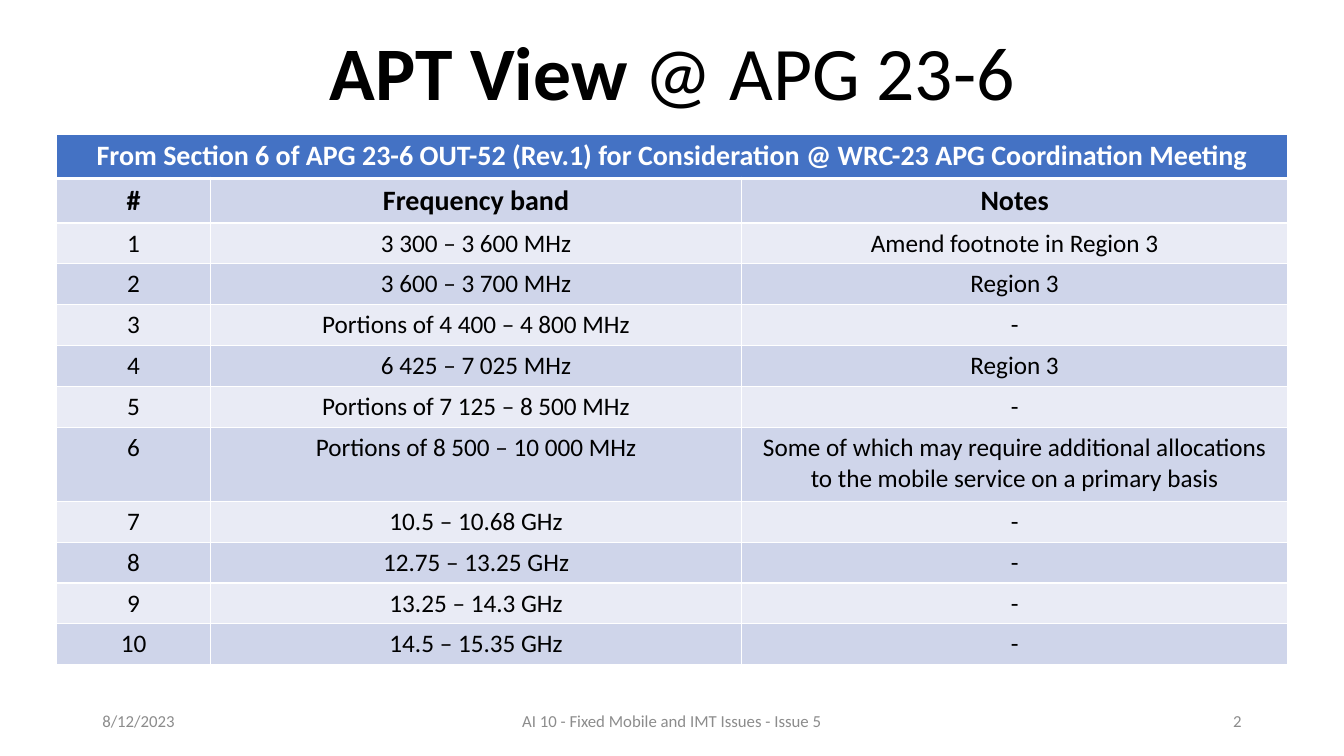
from lxml import etree
from pptx import Presentation
from pptx import util as u
from pptx.dml.color import RGBColor
from pptx.enum import text
from pptx.oxml import ns

COLORS = {
    "header": "4472C4",
    "dark_band": "CFD5EA",
    "light_band": "E9EBF5",
    "white": "FFFFFF",
    "black": "000000",
    "footer": "8C8C8C",
}
CENTER = text.PP_ALIGN.CENTER


def format_runs(paragraph, size, color, bold=False, align=CENTER):
    paragraph.alignment = align
    for run in paragraph.runs:
        run.font.name = "Calibri"
        run.font.size = u.Pt(size)
        run.font.bold = bold
        run.font.color.rgb = RGBColor.from_string(COLORS[color])


def add_borders(cell, bottom_width):
    properties = cell._tc.get_or_add_tcPr()
    widths = {"lnL": 1, "lnR": 1, "lnT": 1, "lnB": bottom_width}
    for position, (side, width) in enumerate(widths.items()):
        line = etree.Element(ns.qn(f"a:{side}"), w=str(u.Pt(width)))
        fill = etree.SubElement(line, ns.qn("a:solidFill"))
        etree.SubElement(fill, ns.qn("a:srgbClr"), val=COLORS["white"])
        properties.insert(position, line)


presentation = Presentation()
presentation.slide_width = u.Pt(960)
presentation.slide_height = u.Pt(540)
slide = presentation.slides.add_slide(presentation.slide_layouts[5])

# Title
title = slide.shapes.title
title.left, title.top = u.Pt(221.8), u.Pt(14.4)
title.width, title.height = u.Pt(517), u.Pt(73)
title.text_frame.text = "APT View "
title.text_frame.auto_size = text.MSO_AUTO_SIZE.NONE
title.text_frame.vertical_anchor = text.MSO_ANCHOR.TOP
paragraph = title.text_frame.paragraphs[0]
paragraph.add_run().text = "@ APG 23-6"
format_runs(paragraph, 54, "black", bold=True)
paragraph.runs[1].font.bold = False

# Frequency band table
bands = [
    ("3 300 – 3 600 MHz", "Amend footnote in Region 3"),
    ("3 600 – 3 700 MHz", "Region 3"),
    ("Portions of 4 400 – 4 800 MHz", "-"),
    ("6 425 – 7 025 MHz", "Region 3"),
    ("Portions of 7 125 – 8 500 MHz", "-"),
    ("Portions of 8 500 – 10 000 MHz",
     "Some of which may require additional allocations to the mobile service on a primary basis"),
    ("10.5 – 10.68 GHz", "-"),
    ("12.75 – 13.25 GHz", "-"),
    ("13.25 – 14.3 GHz", "-"),
    ("14.5 – 15.35 GHz", "-"),
]
heading = "From Section 6 of APG 23-6 OUT-52 (Rev.1) for Consideration @ WRC-23 APG Coordination Meeting"
rows = [(heading, "", ""), ("#", "Frequency band", "Notes")]
rows += [(str(number), *band) for number, band in enumerate(bands, 1)]

table = slide.shapes.add_table(
    len(rows), 3, u.Pt(40.4), u.Pt(95.8), u.Pt(879.4), u.Pt(378)).table
for column, width in zip(table.columns, (110, 379.4, 390)):
    column.width = u.Pt(width)
for row_index, values in enumerate(rows):
    is_tall = row_index == 7
    table.rows[row_index].height = u.Pt(52.8 if is_tall else 29.2)
    if row_index == 0:
        band_color = "header"
    else:
        band_color = "dark_band" if row_index % 2 else "light_band"
    for column_index, value in enumerate(values):
        cell = table.cell(row_index, column_index)
        cell.fill.solid()
        cell.fill.fore_color.rgb = RGBColor.from_string(COLORS[band_color])
        add_borders(cell, bottom_width=3 if row_index == 0 else 1)
        cell.text_frame.text = value
        is_heading = row_index < 2
        format_runs(cell.text_frame.paragraphs[0], 20 if is_heading else 18,
                    "white" if row_index == 0 else "black", bold=is_heading)
table.cell(0, 0).merge(table.cell(0, 2))

# Footer: date, subject and slide number
footers = [
    ("8/12/2023", 66, 216, text.PP_ALIGN.LEFT),
    ("AI 10 - Fixed Mobile and IMT Issues - Issue 5", 318, 324, CENTER),
    ("2", 678, 216, text.PP_ALIGN.RIGHT),
]
for wording, left, width, align in footers:
    footer = slide.shapes.add_textbox(u.Pt(left), u.Pt(500.5), u.Pt(width), u.Pt(28.75))
    footer.text_frame.word_wrap = True
    footer.text_frame.vertical_anchor = text.MSO_ANCHOR.MIDDLE
    footer.text_frame.text = wording
    format_runs(footer.text_frame.paragraphs[0], 12, "footer", align=align)

presentation.save("out.pptx")
